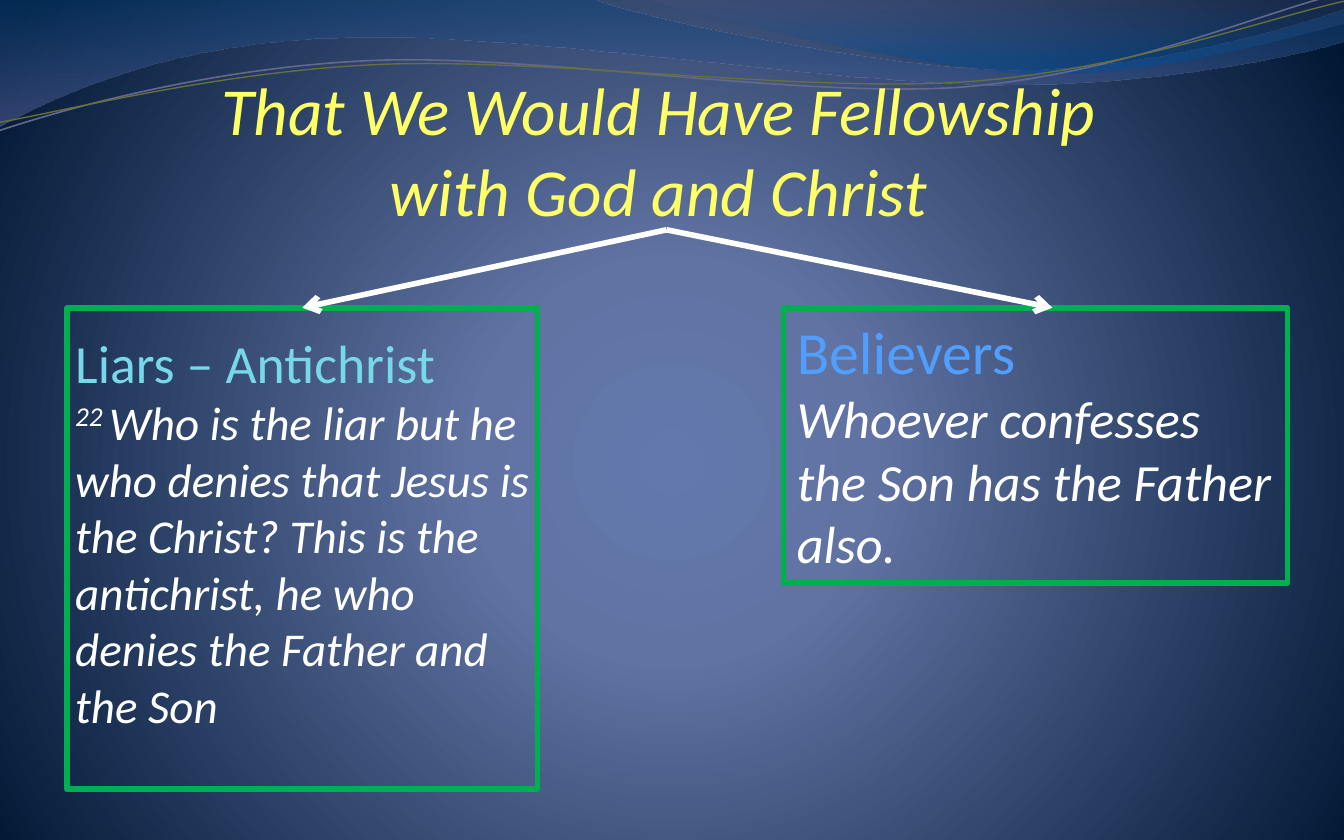
from lxml import etree
from pptx import Presentation
from pptx import util as u
from pptx.dml.color import RGBColor
from pptx.enum import shapes, text
from pptx.oxml.ns import qn

COLORS = {
    "title": "FFFF66", "body": "FFFFFF", "liar": "77D9E8",
    "faith": "519EFC", "frame": "00B050", "arrow": "FFFFFF",
    "mauve": "65688D", "olive": "686F3A",
}
# Gradient stops: position %, colour, opacity %
GLOW = [(0, "6379AE", 100), (25, "6073A3", 100), (100, "001733", 100)]
LEFT = [(0, "074278", 45), (100, "5C629D", 55)]
RIGHT = [(0, "4F537B", 30), (80, "004F98", 45)]


def cm(inch):
    return u.Cm(inch * 2.54)


def blend(root, stops, circle=None):
    """Write the stops and the direction into the gradient under root."""
    grad = next(root.iter(qn("a:gradFill")))
    for node in list(grad):
        grad.remove(node)
    group = etree.SubElement(grad, qn("a:gsLst"))
    for pos, color, alpha in stops:
        stop = etree.SubElement(group, qn("a:gs"), pos=str(pos * 1000))
        tint = etree.SubElement(stop, qn("a:srgbClr"), val=color)
        if alpha < 100:
            etree.SubElement(tint, qn("a:alpha"), val=str(alpha * 1000))
    if circle:
        way = etree.SubElement(grad, qn("a:path"), path="circle")
        etree.SubElement(way, qn("a:fillToRect"),
                         {k: str(v * 1000) for k, v in zip("ltrb", circle)})
    else:
        etree.SubElement(grad, qn("a:lin"), ang="5400000", scaled="1")


class Deck:
    font = "Calibri"

    def __init__(self):
        self.prs = Presentation()
        self.prs.slide_width, self.prs.slide_height = cm(10), cm(6.25)
        self.slide = self.prs.slides.add_slide(self.prs.slide_layouts[6])

    def back(self, stops, circle):
        self.slide.background.fill.gradient()
        blend(self.slide._element, stops, circle)

    def stroke(self, line, color, width):
        line.color.rgb = RGBColor.from_string(COLORS[color])
        line.width = u.Pt(width)

    def trace(self, start, parts, close):
        """Outline: a pair is a line, six numbers are a Bezier curve."""
        pen = self.slide.shapes.build_freeform(*map(cm, start))
        pen.add_line_segments([tuple(map(cm, p[-2:])) for p in parts], close=close)
        shape = pen.convert_to_shape()
        shape.shadow.inherit = False
        for part, node in zip(parts, list(shape._element.iter(qn("a:lnTo")))):
            if len(part) == 6:
                bend = etree.Element(qn("a:cubicBezTo"))
                for x, y in zip(part[::2], part[1::2]):
                    etree.SubElement(bend, qn("a:pt"), x=str(cm(x) - shape.left),
                                     y=str(cm(y) - shape.top))
                node.getparent().replace(node, bend)
        return shape

    def wave(self, stops, start, *parts):
        shape = self.trace(start, parts, True)
        shape.line.fill.background()
        shape.fill.gradient()
        blend(shape._element.spPr, stops)

    def strand(self, color, width, start, *parts):
        shape = self.trace(start, parts, False)
        shape.fill.background()
        self.stroke(shape.line, color, width)

    def style(self, run, size, color, italic=False):
        run.font.name, run.font.size = self.font, u.Pt(size)
        run.font.italic = italic
        run.font.color.rgb = RGBColor.from_string(COLORS[color])

    def setup(self, frame, insets, anchor):
        frame.word_wrap = True
        frame.vertical_anchor = anchor
        (frame.margin_left, frame.margin_top,
         frame.margin_right, frame.margin_bottom) = map(cm, insets)

    def title(self, box, lines, size):
        frame = self.slide.shapes.add_textbox(*map(cm, box)).text_frame
        self.setup(frame, (0, 0.05, 0, 0), text.MSO_ANCHOR.BOTTOM)
        frame.text = "\n".join(lines)
        for para in frame.paragraphs:
            para.alignment = text.PP_ALIGN.CENTER
            self.style(para.runs[0], size, "title", True)

    def panel(self, box, insets, head, body, verse=None):
        """Framed box; head is (words, size, colour), body is (words, size)."""
        shape = self.slide.shapes.add_shape(
            shapes.MSO_SHAPE.RECTANGLE, *map(cm, box))
        shape.shadow.inherit = False
        shape.fill.background()
        self.stroke(shape.line, "frame", 3)
        frame = shape.text_frame
        self.setup(frame, insets, text.MSO_ANCHOR.TOP)
        words, size = body
        para = frame.paragraphs[0]
        para.text = head[0] + "\v" + (verse or words)
        para.alignment = text.PP_ALIGN.LEFT
        if verse:
            para.runs[1]._r.get_or_add_rPr().set("baseline", "30000")
            para.add_run().text = words
        first, *rest = para.runs
        self.style(first, *head[1:])
        for run in rest:
            self.style(run, size, "body", True)

    def arrow(self, start, end):
        link = self.slide.shapes.add_connector(
            shapes.MSO_CONNECTOR.STRAIGHT, *map(cm, start + end))
        self.stroke(link.line, "arrow", 3)
        etree.SubElement(link.line._get_or_add_ln(), qn("a:tailEnd"), type="arrow")
        etree.SubElement(link._element.spPr, qn("a:effectLst"))


def main():
    deck = Deck()

    # Background and waves
    deck.back(GLOW, (10, 110, 10, 100))
    deck.wave(LEFT, (0, 0), (4.4, -0.01),
              (4.76, 0.14, 6.64, 0.52, 7.58, 0.52),
              (8.53, 0.52, 9.58, 0.21, 10, 0.07), (10.01, 0.3),
              (9.83, 0.37, 8.7, 0.63, 7.46, 0.63),
              (6.22, 0.63, 3.82, 0.23, 2.57, 0.28),
              (1.29, 0.3, 0.46, 0.69, -0.01, 0.94), (0, 0))
    deck.wave(RIGHT, (4.79, -0.01),
              (5.09, 0.09, 6.82, 0.51, 7.69, 0.54),
              (8.56, 0.58, 9.61, 0.27, 10, 0.18), (10, 0), (4.79, -0.01))
    deck.strand("mauve", 0.85, (0, 0.97),
                (0.48, 0.81, 1.58, 0.5, 2.77, 0.45),
                (3.95, 0.4, 5.92, 0.73, 7.13, 0.65),
                (8.33, 0.56, 9.39, 0.09, 9.98, -0.05))
    deck.strand("olive", 0.75, (0, 0.91),
                (0.47, 0.83, 1.64, 0.53, 2.83, 0.48),
                (4.03, 0.43, 5.97, 0.69, 7.17, 0.61),
                (8.36, 0.53, 9.41, 0.14, 10, 0.01))

    # The two groups
    top = 2.29
    deck.panel((0.5, top, 3.5, 3.58), (0.06, 0.16, 0, 0),
               ("Liars – Antichrist", 28.8, "liar"),
               ("Who is the liar but he who denies that Jesus is the Christ? "
                "This is the antichrist, he who denies the Father and the Son", 25.2),
               verse="22 ")
    deck.panel((5.83, top, 3.75, 2.05), (0.1, 0.05, 0.1, 0.05),
               ("Believers", 32, "faith"),
               ("Whoever confesses the Son has the Father also.", 28))

    # Title and the arrows from it
    deck.title((0.33, 0.88, 9.25, 0.83),
               ("That We Would Have Fellowship ", "with God and Christ "), 36)
    for x in (2.25, 7.83):
        deck.arrow((4.96, 1.71), (x, top))

    deck.prs.save("out.pptx")


if __name__ == "__main__":
    main()
